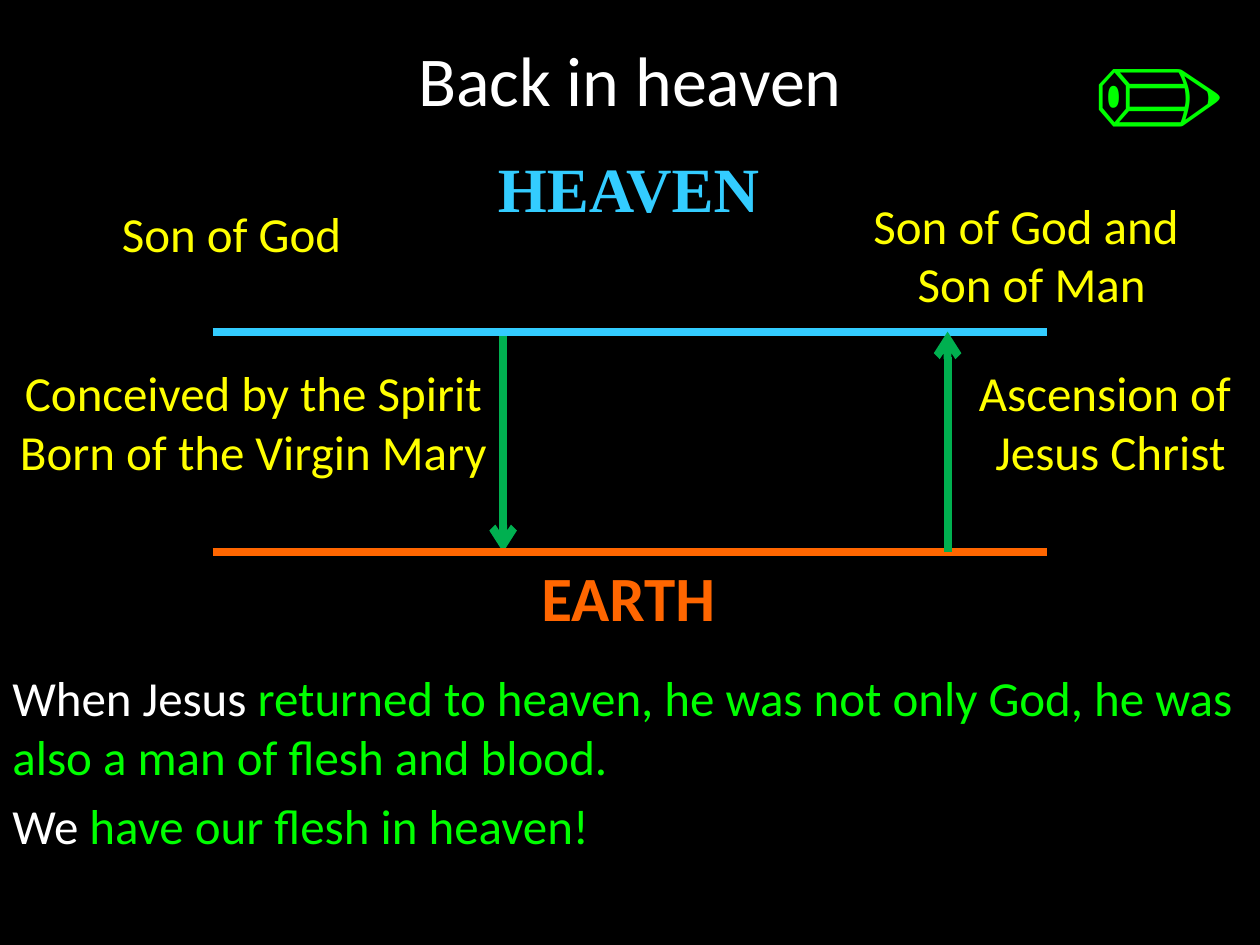
from lxml import etree
from pptx import Presentation
from pptx.dml.color import RGBColor
from pptx.enum.shapes import MSO_CONNECTOR
from pptx.enum.text import MSO_ANCHOR, MSO_AUTO_SIZE, PP_ALIGN
from pptx.oxml.ns import qn
from pptx.util import Pt

STRAIGHT = MSO_CONNECTOR.STRAIGHT
TOP, MIDDLE = MSO_ANCHOR.TOP, MSO_ANCHOR.MIDDLE
LEFT, CENTER = PP_ALIGN.LEFT, PP_ALIGN.CENTER
GROW, FIXED = MSO_AUTO_SIZE.SHAPE_TO_FIT_TEXT, MSO_AUTO_SIZE.NONE

COLORS = {
    "black": "000000",
    "white": "FFFFFF",
    "sky": "33CCFF",
    "earth": "FF6600",
    "arrow": "00B050",
    "yellow": "FFFF00",
    "lime": "00FF00",
}
SANS, SERIF = "Calibri", "Times New Roman"
HEAVEN_Y, EARTH_Y = 189.5, 315.5
LEVEL_LEFT, LEVEL_RIGHT = 121.5, 598.5
DESCENT_X, ASCENT_X = 287.5, 541.5


def rgb(name):
    return RGBColor.from_string(COLORS[name])


class SlideBuilder:
    line_width = 4.5
    body_size = 28

    def __init__(self, prs):
        self.s = prs.slides.add_slide(prs.slide_layouts[6])
        fill = self.s.background.fill
        fill.solid()
        fill.fore_color.rgb = rgb("black")

    def frame(self, box, wrap, anchor, auto_size):
        sp = self.s.shapes.add_textbox(*map(Pt, box))
        tf = sp.text_frame
        tf.word_wrap = wrap
        tf.vertical_anchor = anchor
        tf.auto_size = auto_size
        return tf

    def paragraph(self, tf, index, size, font, align):
        p = tf.add_paragraph() if index else tf.paragraphs[0]
        p.alignment = align
        p.font.size = Pt(size)
        p.font.name = font
        return p

    def label(self, box, lines, color, size=body_size, font=SANS, bold=False,
              wrap=False, anchor=TOP, auto_size=GROW):
        tf = self.frame(box, wrap, anchor, auto_size)
        for i, line in enumerate(lines):
            p = self.paragraph(tf, i, size, font, CENTER)
            p.font.bold = bold
            p.font.color.rgb = rgb(color)
            p.text = line

    def body(self, box, paragraphs):
        tf = self.frame(box, True, TOP, FIXED)
        for i, runs in enumerate(paragraphs):
            p = self.paragraph(tf, i, self.body_size, SANS, LEFT)
            p.space_before = Pt(5.6)
            for text, color in runs:
                r = p.add_run()
                r.text = text
                r.font.color.rgb = rgb(color)

    def line(self, x1, y1, x2, y2, color, arrow=False):
        cxn = self.s.shapes.add_connector(STRAIGHT, *map(Pt, (x1, y1, x2, y2)))
        cxn.line.color.rgb = rgb(color)
        cxn.line.width = Pt(self.line_width)
        if arrow:
            ln = cxn.line._get_or_add_ln()
            etree.SubElement(ln, qn("a:tailEnd"), type="arrow")
        etree.SubElement(cxn._element.spPr, qn("a:effectLst"))


def main():
    prs = Presentation()
    prs.slide_width, prs.slide_height = Pt(720), Pt(540)
    b = SlideBuilder(prs)

    b.line(DESCENT_X, HEAVEN_Y, DESCENT_X, EARTH_Y, "arrow", arrow=True)
    b.label((0, 0, 720, 90), ["Back in heaven"], "white", size=40,
            wrap=True, anchor=MIDDLE, auto_size=FIXED)
    b.body((0, 378, 720, 162), [
        [("When Jesus ", "white"),
         ("returned to heaven, he was not only God, "
          "he was also a man of flesh and blood.", "lime")],
        [("We", "white"), (" have our flesh in heaven!", "lime")],
    ])

    b.label((276.5, 82, 165.5, 51), ["HEAVEN"], "sky", 36, SERIF, bold=True)
    b.label((301.5, 315.5, 115, 51), ["EARTH"], "earth", 36, bold=True)
    for box, lines in [
        ((60, 112.5, 144.5, 41), ["Son of God"]),
        ((0, 203.5, 289.5, 75),
         ["Conceived by the Spirit", "Born of the Virgin Mary"]),
        ((489.5, 108, 200, 75), ["Son of God and ", "Son of Man"]),
        ((549.5, 203.5, 170, 75), ["Ascension of \nJesus Christ"]),
    ]:
        b.label(box, lines, "yellow")

    for y, color in [(HEAVEN_Y, "sky"), (EARTH_Y, "earth")]:
        b.line(LEVEL_LEFT, y, LEVEL_RIGHT, y, color)
    b.line(ASCENT_X, EARTH_Y, ASCENT_X, HEAVEN_Y, "arrow", arrow=True)
    b.label((605.5, 0, 114, 103), ["✏"], "lime", 80, SERIF,
            wrap=True, anchor=MIDDLE)

    prs.save("out.pptx")


if __name__ == "__main__":
    main()
